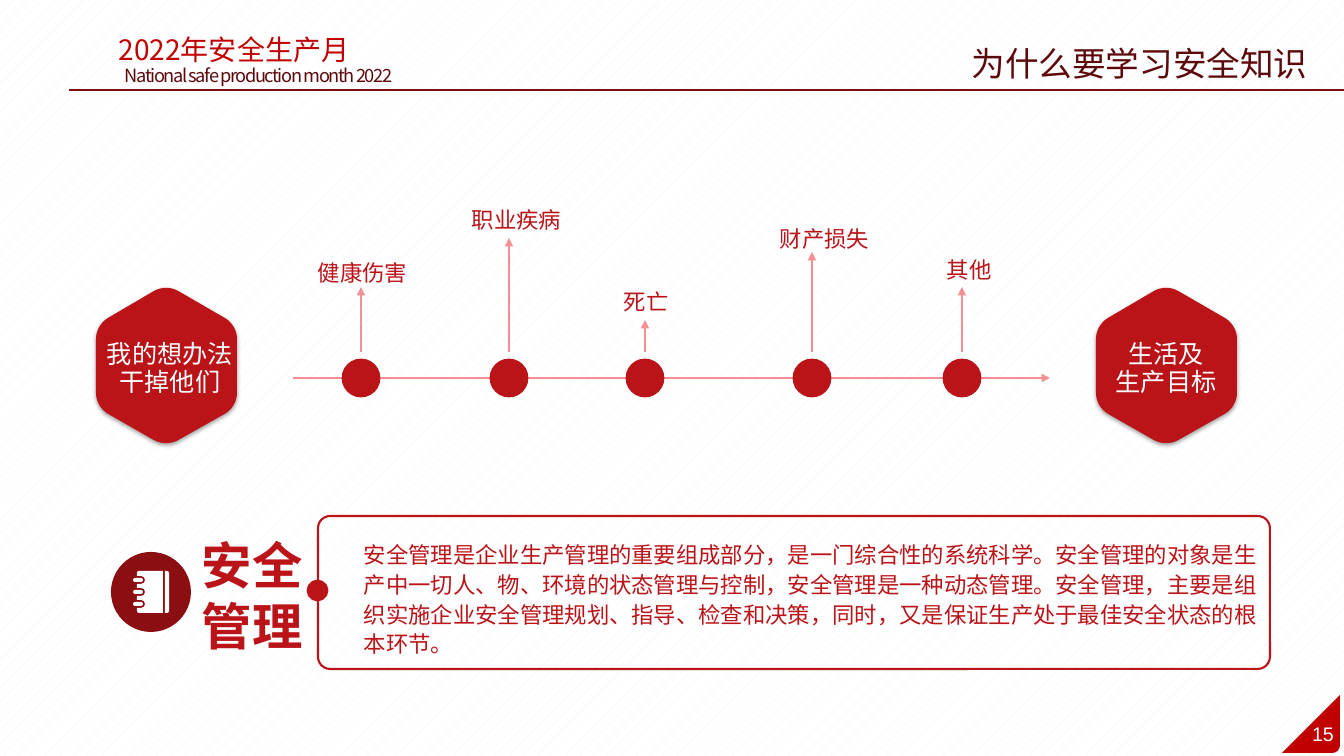
from lxml import etree
from math import hypot
from pptx import Presentation
from pptx.dml.color import RGBColor
from pptx.enum.dml import MSO_PATTERN
from pptx.enum.shapes import MSO_CONNECTOR, MSO_SHAPE
from pptx.enum.text import MSO_ANCHOR, PP_ALIGN
from pptx.oxml import parse_xml
from pptx.oxml.ns import nsdecls, qn
from pptx.util import Pt

PX = 9072  # EMU in one px
STRAIGHT = MSO_CONNECTOR.STRAIGHT
OVAL, DOT = MSO_SHAPE.OVAL, MSO_SHAPE.FLOWCHART_CONNECTOR
FRAME = MSO_SHAPE.ROUNDED_RECTANGLE
LEFT, CENTER = PP_ALIGN.LEFT, PP_ALIGN.CENTER
TOP, MIDDLE = MSO_ANCHOR.TOP, MSO_ANCHOR.MIDDLE
RED, DARK, DEEP, PINK, WHITE = "BA1318", "8B0E12", "5D090C", "F49093", "FFFFFF"
CORNER_RED, RULE_RED = "C00000", "7C0D10"
SANS = "Noto Sans CJK SC"
color = RGBColor.from_string

deck = Presentation()
deck.slide_width, deck.slide_height = 1344 * PX, 756 * PX
page = deck.slides.add_slide(deck.slide_layouts[6])
shapes = page.shapes


def add_text(text, left, top, width, height, size=16, hue=RED, font=SANS, bold=False,
             align=LEFT, anchor=TOP, leading=None, wrap=True, tracking=None):
    box = shapes.add_textbox(left * PX, top * PX, width * PX, height * PX)
    frame = box.text_frame
    frame.word_wrap = wrap
    frame.vertical_anchor = anchor
    frame.text = text
    for para in frame.paragraphs:
        para.alignment = align
        if leading:
            para.line_spacing = leading
        span = para.runs[0]
        span.font.name, span.font.size, span.font.bold = font, Pt(size), bold
        span.font.color.rgb = color(hue)
        props = span.font._element
        etree.SubElement(props, qn("a:ea")).set("typeface", font)
        if tracking:
            props.set("spc", str(tracking))


def add_outline(contours, hue):
    """Fill closed contours of (x, y, corner radius) points, in px."""
    builder, segments, curves = None, 0, []
    for corners in contours:
        points = []
        for i, (x, y, radius) in enumerate(corners):
            if not radius:
                points.append((x * PX, y * PX))
                continue
            ends = []
            for nx, ny, _ in (corners[i - 1], corners[(i + 1) % len(corners)]):
                share = radius / hypot(nx - x, ny - y)
                ends.append((x + (nx - x) * share, y + (ny - y) * share))
            curves.append(segments + len(points))
            # Both ends of the corner, with two handles between them
            for (ex, ey), pull in zip((ends[0], *ends, ends[1]), (0, 0.6, 0.6, 0)):
                points.append((int((ex + (x - ex) * pull) * PX), int((ey + (y - ey) * pull) * PX)))
        if builder is None:
            builder = shapes.build_freeform(*points[0])
        else:
            builder.move_to(*points[0])
        builder.add_line_segments(points[1:], close=False)
        builder.add_line_segments([points[0]], close=True)
        segments += len(points)
    outline = builder.convert_to_shape()
    # Turn each corner's three segments into one curve
    steps = list(outline._element.iter(qn("a:lnTo")))
    for first in curves:
        curve = etree.Element(qn("a:cubicBezTo"))
        steps[first].addprevious(curve)
        for step in steps[first:first + 3]:
            curve.append(step[0])
            step.getparent().remove(step)
    outline.shadow.inherit = False
    outline.fill.solid()
    outline.fill.fore_color.rgb = color(hue)
    outline.line.fill.background()
    return outline


# Background
backdrop = page.background.fill
backdrop.patterned()
backdrop.pattern = MSO_PATTERN.PERCENT_5
backdrop.fore_color.rgb, backdrop.back_color.rgb = color("F2F2F2"), color(WHITE)

# Timeline: dot centre, arrow tip, label and its place
causes = [
    (361, 287, "健康伤害", 308, 252),
    (509, 238, "职业疾病", 462, 199),
    (645, 320, "死亡", 614, 281),
    (812, 252, "财产损失", 770, 218),
    (962, 287, "其他", 937, 249),
]

# Header rule, time axis and arrows, each from its tip
lines = [(69, 90, 1344, 90, RULE_RED, 0.75, False), (1050, 378, 293, 378, PINK, 1.5, True)]
lines += [(x, tip, x, 352, PINK, 1.5, True) for x, tip, *_ in causes]
for x1, y1, x2, y2, hue, weight, arrow in lines:
    line = shapes.add_connector(STRAIGHT, x1 * PX, y1 * PX, x2 * PX, y2 * PX)
    line.line.color.rgb, line.line.width = color(hue), Pt(weight)
    if arrow:
        stroke = line.line._get_or_add_ln()
        etree.SubElement(stroke, qn("a:headEnd")).set("type", "triangle")
    etree.SubElement(line._element.spPr, qn("a:effectLst"))

# Frame of the definition
frame = shapes.add_shape(FRAME, 318 * PX, 516 * PX, 952 * PX, 153 * PX)
frame.adjustments[0] = 0.08
frame.shadow.inherit = False
frame.fill.background()
frame.line.color.rgb, frame.line.width = color(RED), Pt(1.5)

# Round marks: icon disc, frame dot, timeline dots
rounds = [(OVAL, 111, 552, 80, DARK), (DOT, 308, 581, 19, RED)]
rounds += [(DOT, x - 18, 360, 36, RED) for x, *_ in causes]
for kind, left, top, size, hue in rounds:
    mark = shapes.add_shape(kind, left * PX, top * PX, size * PX, size * PX)
    mark.shadow.inherit = False
    mark.fill.solid()
    mark.fill.fore_color.rgb = color(hue)
    if kind == DOT:
        mark.line.color.rgb, mark.line.width = color(hue), Pt(2)
    else:
        mark.line.fill.background()

# Notebook icon: cover with notches, spine strip, rings
cover = [(163, 613, 0), (163, 571, 0), (137, 571, 2)]
rings = []
for y in (580, 592, 604):
    cover += [(137, y - 4, 0), (145, y - 4, 4), (145, y + 4, 4), (137, y + 4, 0)]
    rings.append([(133, y - 2, 2), (143, y - 2, 2), (143, y + 2, 2), (133, y + 2, 2)])
cover.append((137, 613, 2))
spine = [(165, 571, 0), (169, 571, 2), (169, 613, 2), (165, 613, 0)]
add_outline([cover, spine, *rings], WHITE)

# Start and goal hexagons
for left, text_left, text in ((96, 22, "我的想办法\n干掉他们"), (1096, 1018, "生活及\n生产目标")):
    middle, right = left + 70, left + 141
    hexagon = add_outline([[(middle, 284, 14), (right, 325, 14), (right, 407, 14),
                            (middle, 447, 14), (left, 407, 14), (left, 325, 14)]], RED)
    properties = hexagon._element.spPr
    properties.remove(properties.find(qn("a:effectLst")))
    properties.append(parse_xml(
        f'<a:effectLst {nsdecls("a")}><a:outerShdw blurRad="39370" dist="22860" dir="5400000">'
        '<a:srgbClr val="000000"><a:alpha val="35000"/></a:srgbClr></a:outerShdw></a:effectLst>'))
    add_text(text, text_left, 336, 296, 69, size=18, hue=WHITE, align=CENTER, leading=Pt(20))

# Timeline labels
for _, _, label, left, top in causes:
    add_text(label, left, top, 131, 38, leading=1.1)

# Definition
add_text("安全\n管理", 192, 532, 121, 126, size=36, bold=True, anchor=MIDDLE)
add_text("安全管理是企业生产管理的重要组成部分，是一门综合性的系统科学。安全管理的对象是生产中一切人、物、"
         "环境的状态管理与控制，安全管理是一种动态管理。安全管理，主要是组织实施企业安全管理规划、指导、"
         "检查和决策，同时，又是保证生产处于最佳安全状态的根本环节。",
         354, 534, 916, 128, leading=1.1)

# Header
add_text("2022年安全生产月", 61, 28, 346, 44, size=20, hue=CORNER_RED, align=CENTER)
add_text("National safe production month 2022", 110, 59, 297, 32, size=13, hue=DEEP,
         align=CENTER, wrap=False, tracking=-100)
add_text("为什么要学习安全知识", 737, 38, 805, 50, size=24, hue=DEEP, align=CENTER)

# Page corner and number
add_outline([[(1340, 695, 0), (1340, 753, 8), (1282, 753, 0)]], CORNER_RED)
add_text("15", 1301, 717, 44, 34, size=14, hue=WHITE, font="Arial", align=CENTER, wrap=False)

deck.save("out.pptx")
